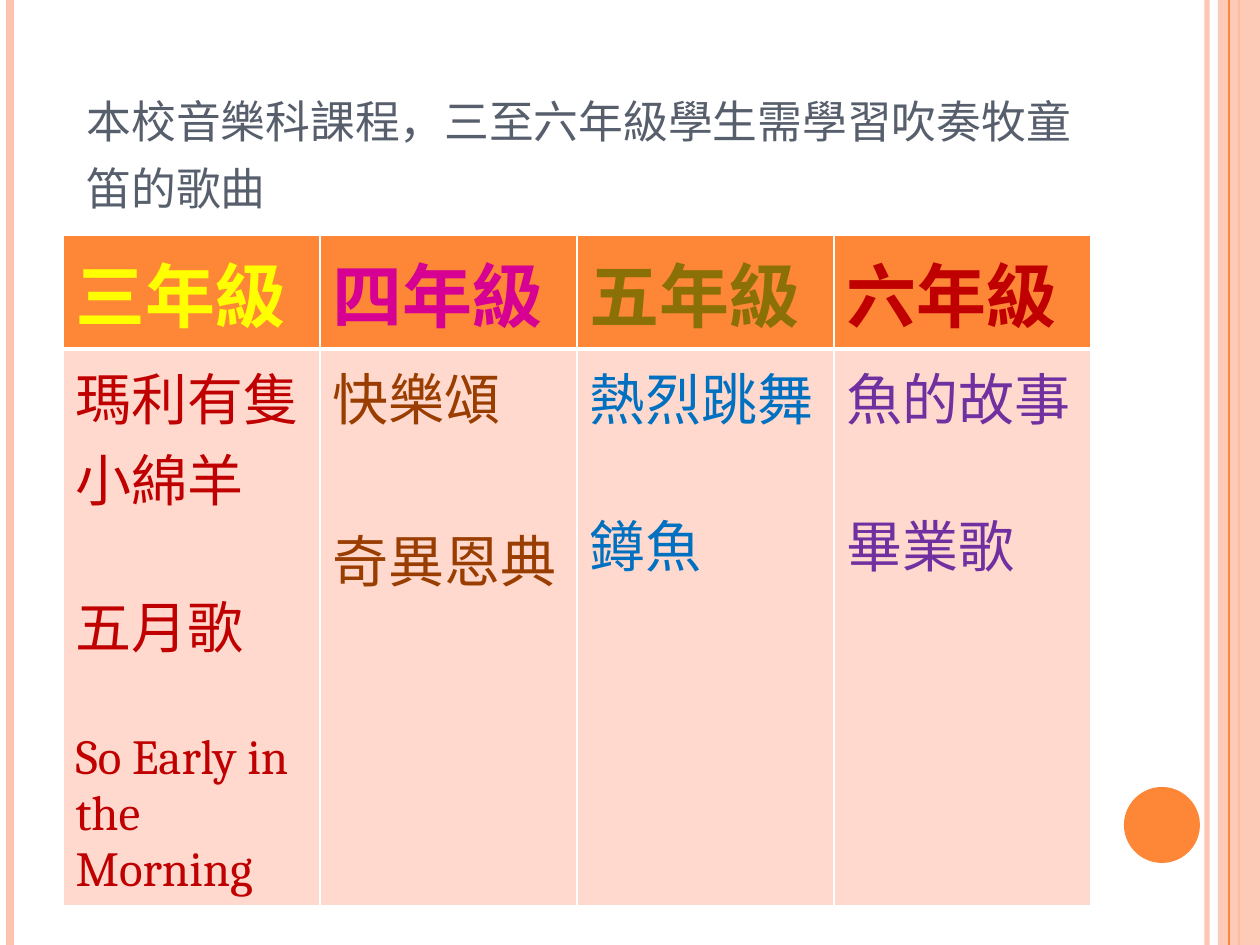
from lxml import etree
from pptx import Presentation
from pptx import util as u
from pptx.dml.color import RGBColor
from pptx.enum import shapes, text
from pptx.oxml import ns

TITLE = "本校音樂科課程，三至六年級學生需學習吹奏牧童笛的歌曲"
GRADES = [
    {"name": "三年級", "head": "FFFF00", "body": "C00000", "gap": 37.5,
     "songs": ["瑪利有隻小綿羊", "五月歌", "So Early in the Morning"]},
    {"name": "四年級", "head": "D60093", "body": "9A3D01", "gap": 46.5,
     "songs": ["快樂頌", "奇異恩典"]},
    {"name": "五年級", "head": "8A7007", "body": "0070C0", "gap": 37.5,
     "songs": ["熱烈跳舞", "鐏魚"]},
    {"name": "六年級", "head": "C00000", "body": "7030A0", "gap": 37.5,
     "songs": ["魚的故事", "畢業歌"]},
]
THEME = {
    "font": "Cambria", "title": "575F6D", "accent": "FE8637",
    "pale": "FEC3AE", "cell": "FFD9CE", "border": "FFFFFF",
    "title_size": 32, "head_size": 40, "song_size": 32, "latin_size": 28,
}
STRIPES = [
    (1207, "pale", 3, 93), (10, "pale", 4.5, 100),
    (1239, "accent", 1.5, 100), (1229, "accent", 0.75, 100),
]
WIDTH, HEIGHT = 1260, 945
TABLE_LEFT, TABLE_TOP, COLUMN = 63, 235, 257
ROWS = (103, 513)


def px(value):
    return u.Emu(round(value * 914400 / 126))


def color(value):
    return RGBColor.from_string(THEME.get(value, value))


def set_alpha(fill, percent):
    node = fill._xPr.find(".//" + ns.qn("a:srgbClr"))
    etree.SubElement(node, ns.qn("a:alpha")).set("val", str(percent * 1000))


def add_stripe(page, x, tint, weight, alpha):
    line = page.shapes.add_connector(
        shapes.MSO_CONNECTOR.STRAIGHT, px(x), 0, px(x), px(HEIGHT))
    line.line.color.rgb = color(tint)
    line.line.width = u.Pt(weight)
    etree.SubElement(line._element.spPr, ns.qn("a:effectLst"))
    if alpha < 100:
        set_alpha(line.line.fill, alpha)


def add_panel(page, kind, area, tint):
    panel = page.shapes.add_shape(kind, *map(px, area))
    panel.shadow.inherit = False
    panel.fill.solid()
    panel.fill.fore_color.rgb = color(tint)
    panel.line.fill.background()
    return panel


def style_text(para, size, tint, bold=False):
    for span in para.runs:
        span.font.name = THEME["font"]
        span.font.size = u.Pt(size)
        span.font.color.rgb = color(tint)
        span.font.bold = bold


def style_cell(cell, tint, bottom, top):
    props = cell._tc.get_or_add_tcPr()
    for side, weight in (("L", 1), ("R", 1), ("T", top), ("B", bottom)):
        edge = etree.SubElement(props, ns.qn("a:ln" + side), w=str(u.Pt(weight)))
        fill = etree.SubElement(edge, ns.qn("a:solidFill"))
        etree.SubElement(fill, ns.qn("a:srgbClr"), val=THEME["border"])
    cell.fill.solid()
    cell.fill.fore_color.rgb = color(tint)


def add_title(page):
    box = page.shapes.title
    box.left, box.top, box.width, box.height = map(px, (74, 37, 1029, 186))
    frame = box.text_frame
    frame.text = TITLE
    frame.word_wrap = True
    frame.auto_size = text.MSO_AUTO_SIZE.NONE
    frame.vertical_anchor = text.MSO_ANCHOR.BOTTOM
    para = frame.paragraphs[0]
    para.alignment = text.PP_ALIGN.LEFT
    style_text(para, THEME["title_size"], "title")
    para.runs[0].font._element.set("cap", "small")


def add_songs(page):
    table = page.shapes.add_table(
        len(ROWS), len(GRADES), px(TABLE_LEFT), px(TABLE_TOP),
        px(COLUMN * len(GRADES)), px(sum(ROWS))).table
    for row, height in zip(table.rows, ROWS):
        row.height = px(height)
    for index, grade in enumerate(GRADES):
        table.columns[index].width = px(COLUMN)
        head, body = table.cell(0, index), table.cell(1, index)
        style_cell(head, "accent", bottom=3, top=1)
        style_cell(body, "cell", bottom=1, top=3)
        head.text_frame.text = grade["name"]
        style_text(head.text_frame.paragraphs[0], THEME["head_size"], grade["head"], True)
        body.text_frame.text = "\n".join(grade["songs"])
        for order, para in enumerate(body.text_frame.paragraphs):
            size = THEME["latin_size" if para.text.isascii() else "song_size"]
            style_text(para, size, grade["body"])
            if order:
                para.space_before = u.Pt(grade["gap"])


def main():
    deck = Presentation()
    deck.slide_width, deck.slide_height = px(WIDTH), px(HEIGHT)
    page = deck.slides.add_slide(deck.slide_layouts.get_by_name("Title Only"))
    for stripe in STRIPES[:3]:
        add_stripe(page, *stripe)
    band = add_panel(page, shapes.MSO_SHAPE.RECTANGLE, (1218, 0, 42, HEIGHT), "pale")
    set_alpha(band.fill, 87)
    add_stripe(page, *STRIPES[3])
    add_panel(page, shapes.MSO_SHAPE.OVAL, (1124, 787, 76, 76), "accent")
    add_title(page)
    add_songs(page)
    deck.save("out.pptx")


if __name__ == "__main__":
    main()
